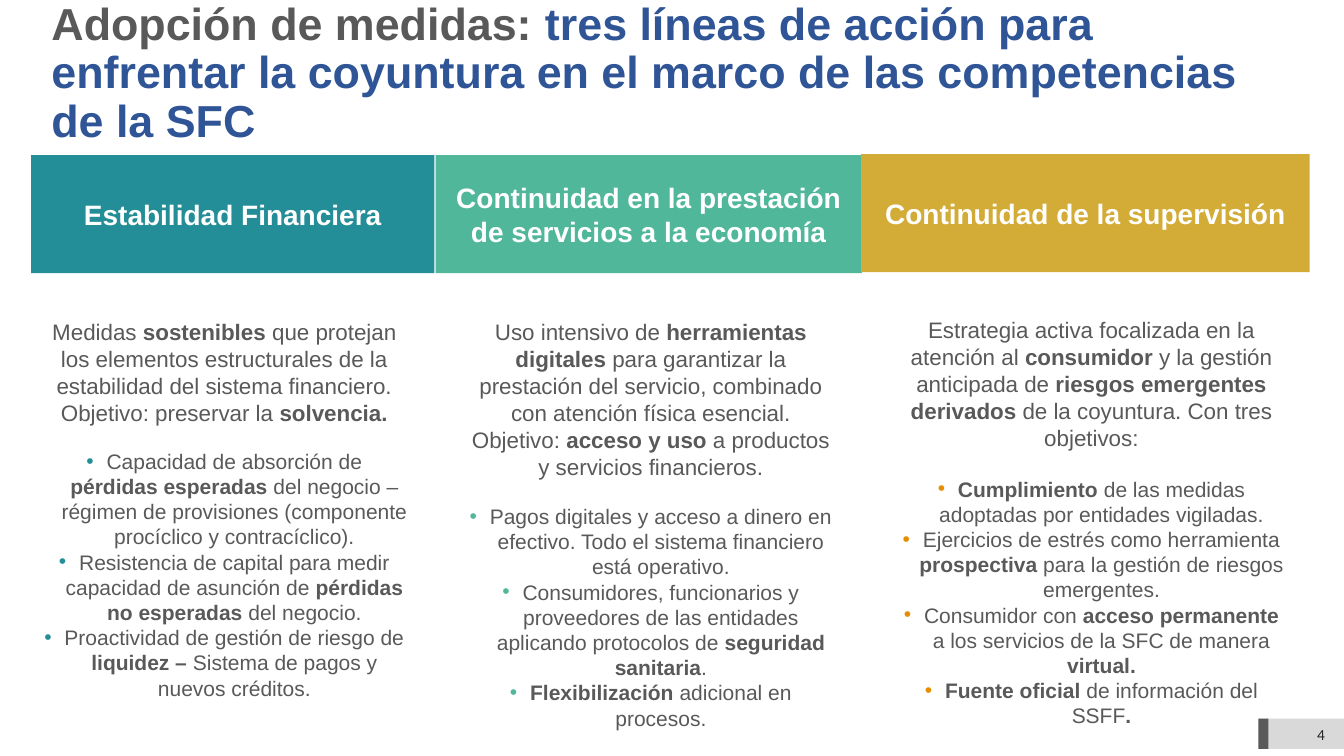
from lxml import etree
from pptx import Presentation
from pptx.dml.color import RGBColor
from pptx.enum.shapes import MSO_SHAPE
from pptx.enum.text import MSO_ANCHOR, MSO_AUTO_SIZE, PP_ALIGN
from pptx.oxml.ns import qn
from pptx.util import Inches, Pt

RECTANGLE = MSO_SHAPE.RECTANGLE
MIDDLE = MSO_ANCHOR.MIDDLE
NO_AUTOFIT = MSO_AUTO_SIZE.NONE
LEFT, CENTER, RIGHT = PP_ALIGN.LEFT, PP_ALIGN.CENTER, PP_ALIGN.RIGHT

GRAY = RGBColor(0x59, 0x59, 0x59)
LIGHT_GRAY = RGBColor(0xD9, 0xD9, 0xD9)
DARK = RGBColor(0x26, 0x26, 0x26)
BLUE = RGBColor(0x2F, 0x55, 0x97)
WHITE = RGBColor(0xFF, 0xFF, 0xFF)
TEAL = RGBColor(0x24, 0x8E, 0x98)
GREEN = RGBColor(0x50, 0xB7, 0x9A)
GOLD = RGBColor(0xD3, 0xAC, 0x37)
ORANGE = RGBColor(0xE6, 0x8E, 0x00)

TITLE = [
    ("Adopción de medidas: ", GRAY),
    ("tres líneas de acción para enfrentar la coyuntura en el marco "
     "de las competencias de la SFC", BLUE),
]

# Text between double asterisks is bold.
COLUMNS = [
    {
        "heading": "Estabilidad Financiera",
        "heading_at": (0.31, 1.54, 4, 1.17), "fill": TEAL,
        "body_at": (0.11, 2.96, 4.23, 3.7), "bullet": TEAL, "gap": 16,
        "intro": "Medidas **sostenibles **que protejan los elementos "
                 "estructurales de la estabilidad del sistema financiero. "
                 "Objetivo: preservar la **solvencia.**",
        "points": [
            "Capacidad de absorción de **pérdidas esperadas** del negocio – "
            "régimen de provisiones (componente procíclico y contracíclico).",
            "Resistencia de capital para medir capacidad de asunción de "
            "**pérdidas no esperadas** del negocio.",
            "Proactividad de gestión de riesgo de **liquidez – **"
            "Sistema de pagos y nuevos créditos.",
        ],
    },
    {
        "heading": "Continuidad en la prestación de servicios a la economía",
        "heading_at": (4.32, 1.54, 4.23, 1.17), "fill": GREEN,
        "body_at": (4.34, 2.96, 4.23, 3.86), "bullet": GREEN, "gap": 17,
        "intro": "Uso intensivo de **herramientas digitales **para garantizar "
                 "la prestación del servicio, combinado con atención física "
                 "esencial. Objetivo: **acceso y uso** a productos y "
                 "servicios financieros.",
        "points": [
            "Pagos digitales y acceso a dinero en efectivo. Todo el sistema "
            "financiero está operativo.",
            "Consumidores, funcionarios y proveedores de las entidades "
            "aplicando protocolos de **seguridad sanitaria**.",
            "**Flexibilización** adicional en procesos.",
        ],
    },
    {
        "heading": "Continuidad de la supervisión",
        "heading_at": (8.54, 1.53, 4.45, 1.17), "fill": GOLD,
        "body_at": (8.6, 2.94, 4.45, 3.7), "bullet": ORANGE, "gap": 18,
        "intro": "Estrategia activa focalizada en la atención al "
                 "**consumidor **y la gestión anticipada de **riesgos "
                 "emergentes derivados **de la coyuntura. Con tres objetivos:",
        "points": [
            "**Cumplimiento** de las medidas adoptadas por entidades "
            "vigiladas.",
            "Ejercicios de estrés como herramienta **prospectiva** para la "
            "gestión de riesgos emergentes.",
            "Consumidor con **acceso permanente **a los servicios de la SFC "
            "de manera **virtual.**",
            "**Fuente oficial **de información del SSFF**.**",
        ],
    },
]


def set_format(target, values):
    for name, value in values.items():
        setattr(target, name, value)


def add_span(para, text, size, color, bold=False, font="Arial"):
    span = para.add_run()
    span.text = text
    set_format(span.font, {"name": font, "size": Pt(size), "bold": bold})
    span.font.color.rgb = color


def add_marked_text(para, text, size):
    """Add text whose parts between double asterisks are bold."""
    for index, part in enumerate(text.split("**")):
        if part:
            add_span(para, part, size, GRAY, bold=index % 2 == 1)


def add_bullet(para, color):
    properties = para._p.get_or_add_pPr()
    properties.set("marL", str(Inches(0.2)))
    properties.set("indent", str(Inches(-0.2)))
    bullet_color = etree.SubElement(properties, qn("a:buClr"))
    etree.SubElement(bullet_color, qn("a:srgbClr"), val=str(color))
    etree.SubElement(properties, qn("a:buFont"), typeface="Arial")
    etree.SubElement(properties, qn("a:buChar"), char="•")


def add_rectangle(page, at, fill):
    box = page.shapes.add_shape(RECTANGLE, *map(Inches, at))
    box.shadow.inherit = False
    box.fill.solid()
    box.fill.fore_color.rgb = fill
    box.line.fill.background()
    return box


def add_heading(page, at, fill, text):
    frame = add_rectangle(page, at, fill).text_frame
    set_format(frame, {"word_wrap": True, "vertical_anchor": MIDDLE})
    para = frame.paragraphs[0]
    para.alignment = CENTER
    add_span(para, text, 20, WHITE, bold=True)


def add_body(page, column):
    box = page.shapes.add_textbox(*map(Inches, column["body_at"]))
    frame = box.text_frame
    set_format(frame, {
        "word_wrap": True, "margin_left": Inches(0.3),
        "margin_top": Inches(0.2), "margin_right": Inches(0.3),
        "margin_bottom": Inches(0.05),
    })
    intro = frame.paragraphs[0]
    intro.alignment = CENTER
    add_marked_text(intro, column["intro"], 16)
    for index, point in enumerate(column["points"]):
        para = frame.add_paragraph()
        para.alignment = CENTER
        if index == 0:
            para.space_before = Pt(column["gap"])
        add_bullet(para, column["bullet"])
        add_marked_text(para, point, 15)


def format_title(page):
    title = page.shapes.title
    set_format(title, {
        "left": Inches(0.41), "top": Inches(0.05),
        "width": Inches(12.58), "height": Inches(1.37),
    })
    frame = title.text_frame
    set_format(frame, {"word_wrap": True, "auto_size": NO_AUTOFIT,
                       "vertical_anchor": MIDDLE})
    para = frame.paragraphs[0]
    set_format(para, {"alignment": LEFT, "line_spacing": 0.9})
    for text, color in TITLE:
        add_span(para, text, 32, color, bold=True)


def add_page_number(page, number):
    add_rectangle(page, (12.49, 7.13, 0.84, 0.3), LIGHT_GRAY)
    add_rectangle(page, (12.48, 7.13, 0.1, 0.3), GRAY)
    box = page.shapes.add_textbox(*map(Inches, (12.53, 7.09, 0.71, 0.4)))
    frame = box.text_frame
    set_format(frame, {"word_wrap": True, "vertical_anchor": MIDDLE})
    para = frame.paragraphs[0]
    para.alignment = RIGHT
    add_span(para, number, 11, DARK, font="Calibri")


def main():
    deck = Presentation()
    set_format(deck, {"slide_width": Inches(13.33),
                      "slide_height": Inches(7.5)})
    page = deck.slides.add_slide(deck.slide_layouts[5])
    add_page_number(page, "4")
    format_title(page)
    for column in COLUMNS:
        add_body(page, column)
        add_heading(page, column["heading_at"], column["fill"],
                    column["heading"])
    deck.save("out.pptx")


if __name__ == "__main__":
    main()
